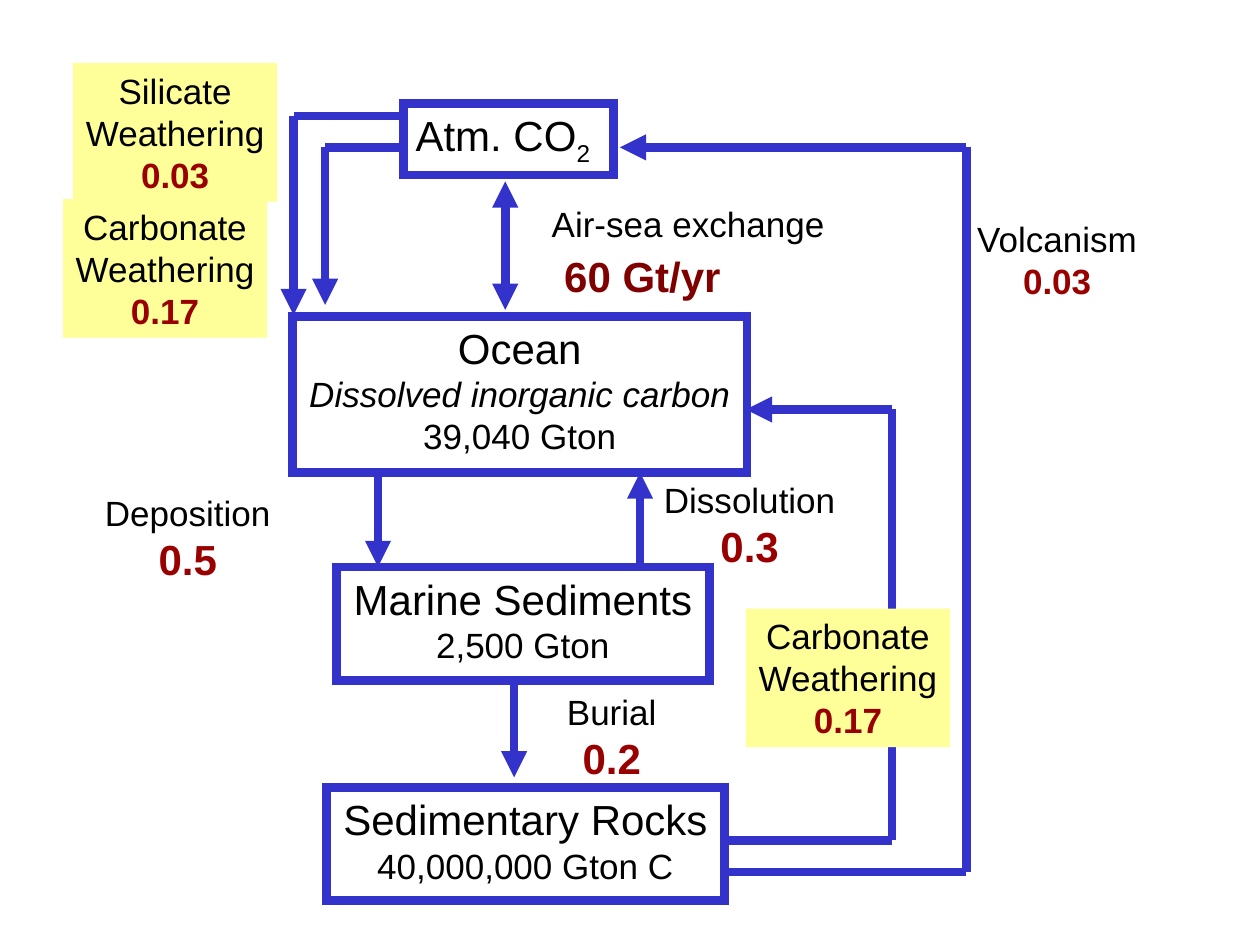
from pptx import Presentation
from pptx.dml.color import RGBColor
from pptx.enum.shapes import MSO_CONNECTOR as CONN, MSO_SHAPE as SHAPE
from pptx.enum.text import MSO_ANCHOR as ANCHOR, PP_ALIGN as ALIGN
from pptx.oxml.ns import qn
from pptx.util import Inches, Pt
from lxml.etree import SubElement

BLUE, YELLOW, RED, MAROON, BLACK = "3333CC", "FFFF99", "990000", "800000", "000000"
NAME = {"size": Pt(24)}
NOTE = {"size": Pt(20)}
ITALIC = {"size": Pt(20), "italic": True}
FLUX = {"size": Pt(24), "bold": True, "color": RED}
SMALL_FLUX = {"size": Pt(20), "bold": True, "color": RED}


def rgb(value):
    """Turn a hex string into a colour."""
    return RGBColor.from_string(value)


def add_run(p, text, style):
    """Add one run with its font values."""
    r = p.add_run()
    r.text = text
    values = {"name": "Arial", "color": BLACK, **style}
    r.font.color.rgb = rgb(values.pop("color"))
    for key, value in values.items():
        setattr(r.font, key, value)
    return r


def write(s, lines, align=ALIGN.CENTER, wrap=False):
    """Write (text, style) lines into a shape from its top."""
    tf = s.text_frame
    for key, value in {"word_wrap": wrap, "vertical_anchor": ANCHOR.TOP}.items():
        setattr(tf, key, value)
    for i, (text, style) in enumerate(lines):
        p = tf.paragraphs[0] if i == 0 else tf.add_paragraph()
        p.alignment = align
        add_run(p, text, style)


def rectangle(slide, box, fill=None, line=None):
    """Draw a flat rectangle with an optional fill and square-cornered outline."""
    s = slide.shapes.add_shape(SHAPE.RECTANGLE, *map(Inches, box))
    s.shadow.inherit = False
    if fill:
        s.fill.solid()
        s.fill.fore_color.rgb = rgb(fill)
    else:
        s.fill.background()
    if line:
        s.line.color.rgb = rgb(line)
        s.line.width = Pt(5)
        SubElement(s.line._get_or_add_ln(), qn("a:miter"), lim="800000")
    else:
        s.line.fill.background()
    return s


def reservoir(slide, box, lines, **layout):
    """Draw an outlined carbon reservoir."""
    s = rectangle(slide, box, line=BLUE)
    write(s, lines, **layout)
    return s


def weathering(slide, left, top, rock, flux):
    """Draw a yellow weathering card."""
    s = rectangle(slide, (left, top, 1.62, 1.1), fill=YELLOW)
    write(s, [(rock, NOTE), ("Weathering", NOTE), (flux, SMALL_FLUX)], wrap=True)


def label(slide, box, lines, align=ALIGN.CENTER):
    """Place a process label beside its arrow."""
    write(slide.shapes.add_textbox(*map(Inches, box)), lines, align)


def route(slide, *points, both=False):
    """Join points with straight lines, ending in an arrowhead."""
    for i, (start, end) in enumerate(zip(points, points[1:]), 1):
        s = slide.shapes.add_connector(CONN.STRAIGHT, *map(Inches, start + end))
        s.line.color.rgb = rgb(BLUE)
        s.line.width = Pt(5)
        ln = s.line._get_or_add_ln()
        if both:
            SubElement(ln, qn("a:headEnd"), type="triangle")
        if i == len(points) - 1:
            SubElement(ln, qn("a:tailEnd"), type="triangle")
        SubElement(s._element.spPr, qn("a:effectLst"))


def reservoirs(slide):
    """Place the four reservoirs from air to rock."""
    air = reservoir(slide, (3.2, 0.82, 1.67, 0.57), [("Atm. CO", NAME)],
                    align=ALIGN.LEFT, wrap=True)
    r = add_run(air.text_frame.paragraphs[0], "2", NAME)
    r.font._element.set("baseline", "-25000")
    reservoir(slide, (2.32, 2.51, 3.61, 1.24),
              [("Ocean", NAME), ("Dissolved inorganic carbon", ITALIC), ("39,040 Gton", NOTE)])
    reservoir(slide, (2.67, 4.5, 2.96, 0.9), [("Marine Sediments", NAME), ("2,500 Gton", NOTE)])
    reservoir(slide, (2.59, 6.25, 3.16, 0.9),
              [("Sedimentary Rocks", NAME), ("40,000,000 Gton C", NOTE)])


def fluxes(slide):
    """Draw the arrows between reservoirs."""
    route(slide, (4.01, 1.44), (4.01, 2.46), both=True)
    for points in (
        [(3, 3.75), (3, 4.5)],
        [(5.08, 4.5), (5.08, 3.75)],
        [(4.08, 5.42), (4.08, 6.17)],
        [(5.75, 6.92), (7.67, 6.92), (7.67, 1.17), (4.92, 1.17)],
        [(5.75, 6.67), (7.08, 6.67), (7.08, 3.25), (5.92, 3.25)],
        [(3.17, 1.17), (2.58, 1.17), (2.58, 2.42)],
        [(3.17, 0.92), (2.33, 0.92), (2.33, 2.5)],
    ):
        route(slide, *points)


def labels(slide):
    """Place the process names, rates and weathering cards."""
    label(slide, (4.28, 1.56, 2.45, 0.43), [("Air-sea exchange", NOTE)], ALIGN.LEFT)
    label(slide, (4.38, 1.94, 1.5, 0.5), [("60 Gt/yr", {**FLUX, "color": MAROON})], ALIGN.LEFT)
    for box, name, flux, style in (
        ((0.73, 3.85, 1.52, 0.83), "Deposition", "0.5", FLUX),
        ((5.17, 3.75, 1.56, 0.83), "Dissolution", "0.3", FLUX),
        ((4.4, 5.43, 0.91, 0.83), "Burial", "0.2", FLUX),
        ((7.65, 1.68, 1.48, 0.77), "Volcanism", "0.03", SMALL_FLUX),
    ):
        label(slide, box, [(name, NOTE), (flux, style)])
    for left, top, rock, flux in (
        (5.92, 4.83, "Carbonate", "0.17"),
        (0.5, 1.58, "Carbonate", "0.17"),
        (0.58, 0.5, "Silicate", "0.03"),
    ):
        weathering(slide, left, top, rock, flux)


def main():
    """Build the carbon cycle slide."""
    prs = Presentation()
    prs.slide_width, prs.slide_height = Inches(10), Inches(7.5)
    slide = prs.slides.add_slide(prs.slide_layouts[6])
    for draw in (reservoirs, fluxes, labels):
        draw(slide)
    prs.save("out.pptx")


if __name__ == "__main__":
    main()
